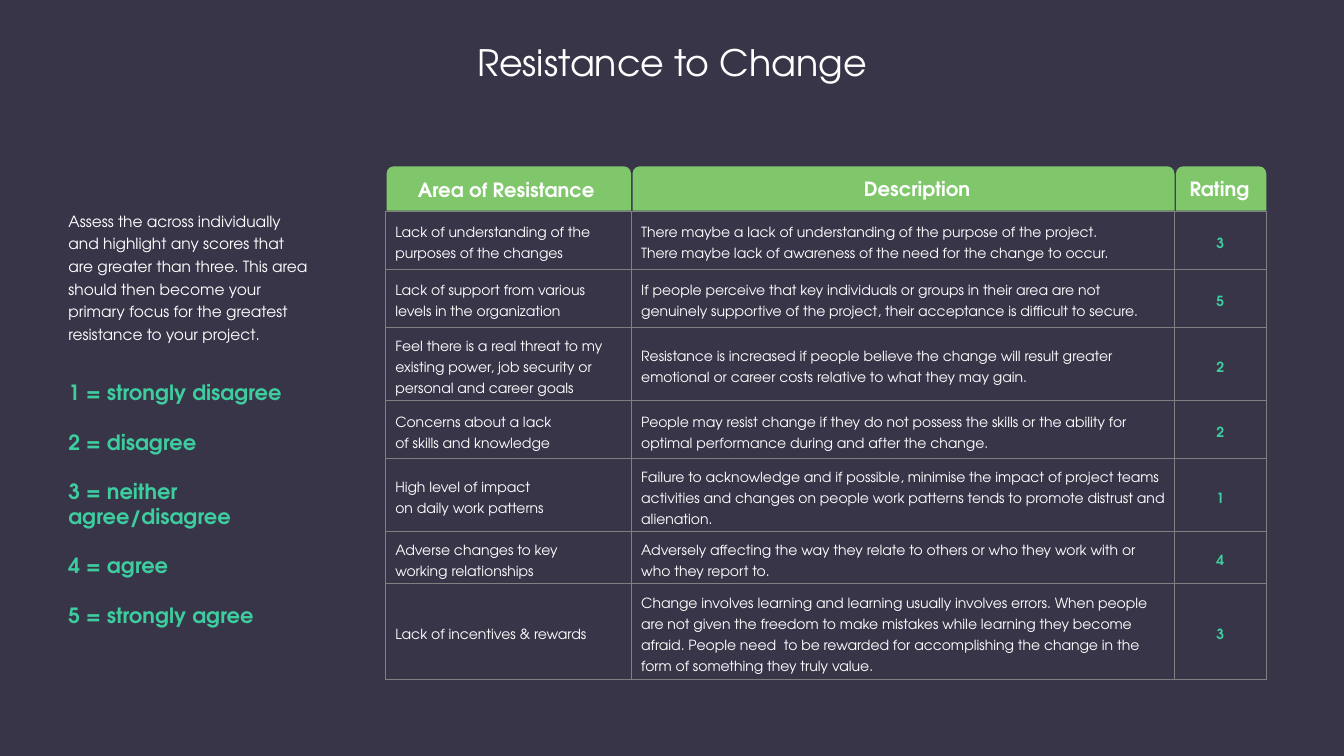
from dataclasses import dataclass
from itertools import accumulate

from lxml import etree
from pptx import Presentation
from pptx import util as u
from pptx.dml.color import RGBColor
from pptx.enum import shapes, text
from pptx.oxml import ns

FONT = "TeX Gyre Adventor"
DARK, WHITE, TEAL, GREEN, GREY = "383548", "FFFFFF", "3DCD9F", "7FC76A", "808080"
TABLE_LEFT, TABLE_TOP = 28.66, 28
HEAD_TOP, HEAD_HEIGHT, HEAD_GAP = 22, 5.87, 0.1
COLUMNS = [18.3, 40.43, 6.83]
MIDDLE, TOP = text.MSO_ANCHOR.MIDDLE, text.MSO_ANCHOR.TOP
CENTER, LEFT = text.PP_ALIGN.CENTER, text.PP_ALIGN.LEFT

prs = Presentation()
prs.slide_width, prs.slide_height = u.Inches(13.33), u.Inches(7.5)


@dataclass
class Box:
    left: float
    top: float
    width: float
    height: float

    def emu(self) -> tuple[int, int, int, int]:
        return share_x(self.left), share_y(self.top), share_x(self.width), share_y(self.height)


@dataclass
class Style:
    size: float
    color: str = WHITE
    bold: bool = False
    align: int = LEFT
    line: float | None = None
    gap: float = 0


@dataclass
class Label:
    words: str
    box: Box
    style: Style
    anchor: int = MIDDLE
    wrap: bool = True


@dataclass
class Resistance:
    height: float
    area: str
    description: str
    rating: int


HEADING = Style(14, bold=True, align=CENTER)
BODY = Style(10, line=15)
RATING = Style(10, TEAL, True, CENTER, 15)

LABELS = [
    Label("Assess the across individually and highlight any scores that are greater than three. "
          "This area should then become your primary focus for the greatest resistance to your project.",
          Box(4.35, 26.93, 19.65, 19.07), Style(11, line=16.2)),
    Label("Area of Resistance", Box(30.05, 22.8, 15.23, 4.53), HEADING, wrap=False),
    Label("Description", Box(61.3, 22.67, 13.88, 4.53), HEADING),
    Label("Rating", Box(86.95, 22.67, 7.58, 4.53), HEADING),
    Label("1 = strongly disagree\n2 = disagree\n3 = neither agree/disagree\n4 = agree\n5 = strongly agree",
          Box(4.35, 49.6, 21, 31.6), Style(15, TEAL, True, gap=17.2), TOP),
]

RESISTANCES = [
    Resistance(7.67, "Lack of understanding of the purposes of the changes",
               "There maybe a lack of understanding of the purpose of the project.\n"
               "There maybe lack of awareness of the need for the change to occur.", 3),
    Resistance(7.67, "Lack of support from various levels in the organization",
               "If people perceive that key individuals or groups in their area are not "
               "genuinely supportive of the project, their acceptance is difficult to secure.", 5),
    Resistance(9.67, "Feel there is a real threat to my existing power, job security or personal and career goals",
               "Resistance is increased if people believe the change will result greater "
               "emotional or career costs relative to what they may gain.", 2),
    Resistance(7.67, "Concerns about a lack\nof skills and knowledge",
               "People may resist change if they do not possess the skills or the ability for "
               "optimal performance during and after the change.", 2),
    Resistance(9.67, "High level of impact\non daily work patterns",
               "Failure to acknowledge and if possible, minimise the impact of project teams "
               "activities and changes on people work patterns tends to promote distrust and alienation.", 1),
    Resistance(6.87, "Adverse changes to key\nworking relationships",
               "Adversely affecting the way they relate to others or who they work with or "
               "who they report to.", 4),
    Resistance(12.7, "Lack of incentives & rewards",
               "Change involves learning and learning usually involves errors. When people "
               "are not given the freedom to make mistakes while learning they become "
               "afraid. People need  to be rewarded for accomplishing the change in the "
               "form of something they truly value.", 3),
]


def share_x(percent: float) -> int:
    return round(prs.slide_width * percent / 100)


def share_y(percent: float) -> int:
    return round(prs.slide_height * percent / 100)


def paint(fill, color: str) -> None:
    fill.solid()
    fill.fore_color.rgb = RGBColor.from_string(color)


def write(tf, words: str, style: Style) -> None:
    tf.text = words
    for i, p in enumerate(tf.paragraphs):
        p.alignment = style.align
        if style.line:
            p.line_spacing = u.Pt(style.line)
        if i and style.gap:
            p.space_before = u.Pt(style.gap)
        for r in p.runs:
            r.font.name, r.font.size, r.font.bold = FONT, u.Pt(style.size), style.bold
            r.font.color.rgb = RGBColor.from_string(style.color)


def add_title(s, words: str, box: Box) -> None:
    sp = s.shapes.title
    sp.left, sp.top, sp.width, sp.height = box.emu()
    tf = sp.text_frame
    write(tf, words, Style(26, align=CENTER))
    tf.word_wrap, tf.vertical_anchor = False, TOP
    tf.auto_size = text.MSO_AUTO_SIZE.NONE


def add_label(s, label: Label) -> None:
    tf = s.shapes.add_textbox(*label.box.emu()).text_frame
    write(tf, label.words, label.style)
    tf.word_wrap, tf.vertical_anchor = label.wrap, label.anchor


def add_head(s, left: float, width: float) -> None:
    box = Box(left + HEAD_GAP, HEAD_TOP, width - HEAD_GAP, HEAD_HEIGHT)
    sp = s.shapes.add_shape(shapes.MSO_SHAPE.ROUND_2_SAME_RECTANGLE, *box.emu())
    sp.shadow.inherit = False
    paint(sp.fill, GREEN)
    sp.line.fill.background()


def add_borders(cell, color: str, width: float) -> None:
    tc_pr = cell._tc.get_or_add_tcPr()
    for side in ("lnL", "lnR", "lnT", "lnB"):
        ln = etree.SubElement(tc_pr, ns.qn(f"a:{side}"), w=str(u.Pt(width)))
        fill = etree.SubElement(ln, ns.qn("a:solidFill"))
        etree.SubElement(fill, ns.qn("a:srgbClr"), val=color)


def add_ratings(s, rows: list[Resistance]) -> None:
    box = Box(TABLE_LEFT, TABLE_TOP, sum(COLUMNS), sum(row.height for row in rows))
    table = s.shapes.add_table(len(rows), len(COLUMNS), *box.emu()).table
    table.first_row = table.horz_banding = False
    for column, width in zip(table.columns, COLUMNS):
        column.width = share_x(width)
    for i, row in enumerate(rows):
        table.rows[i].height = share_y(row.height)
        entries = ((row.area, BODY), (row.description, BODY), (str(row.rating), RATING))
        for j, (words, style) in enumerate(entries):
            cell = table.cell(i, j)
            write(cell.text_frame, words, style)
            cell.vertical_anchor = MIDDLE
            add_borders(cell, GREY, 0.75)
            paint(cell.fill, DARK)


def main() -> None:
    s = prs.slides.add_slide(prs.slide_layouts[5])
    paint(s.background.fill, DARK)
    add_title(s, "Resistance to Change", Box(34.57, 4.67, 30.9, 7.2))
    add_ratings(s, RESISTANCES)
    for left, width in zip(accumulate(COLUMNS, initial=TABLE_LEFT), COLUMNS):
        add_head(s, left, width)
    for label in LABELS:
        add_label(s, label)
    prs.save("out.pptx")


if __name__ == "__main__":
    main()
